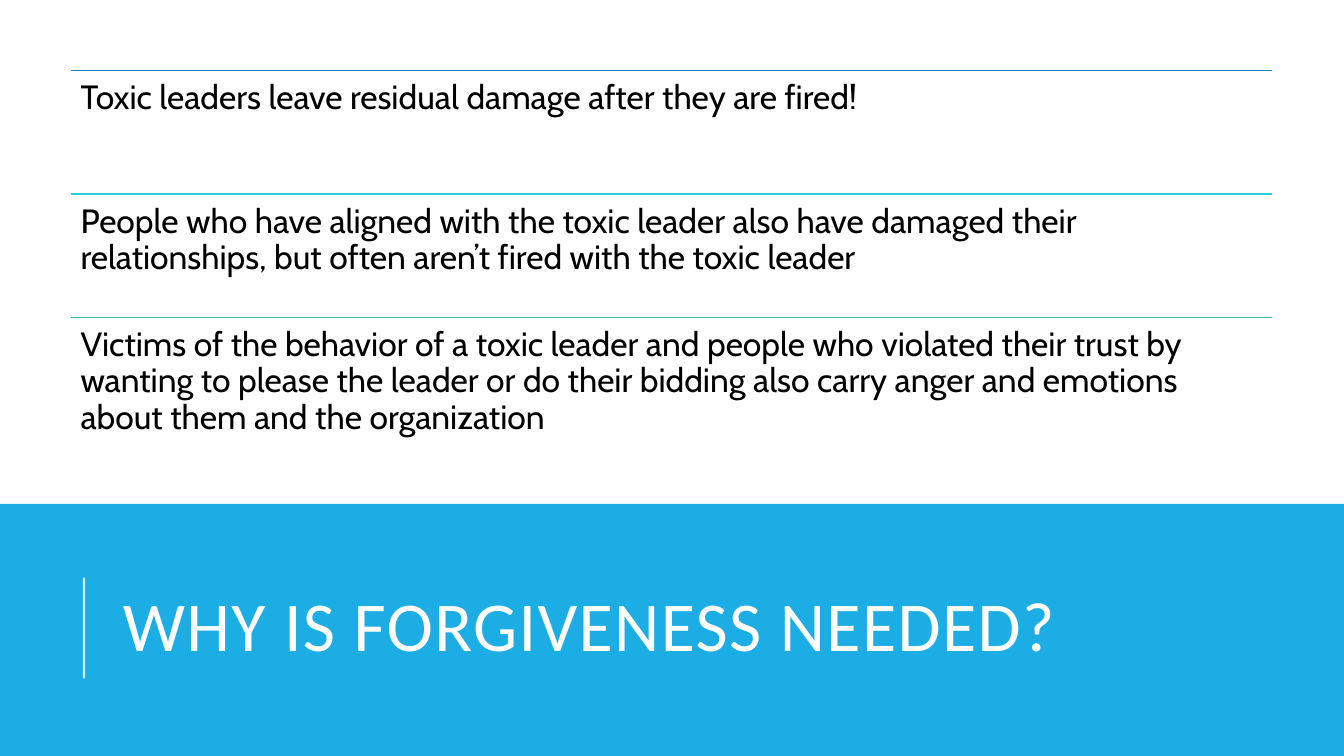
from dataclasses import dataclass

from lxml.etree import SubElement
from pptx import Presentation
from pptx.dml.color import RGBColor
from pptx.enum.shapes import MSO_CONNECTOR, MSO_SHAPE
from pptx.enum.text import MSO_ANCHOR
from pptx.oxml.ns import qn
from pptx.util import Inches, Pt

WHITE = RGBColor(0xFF, 0xFF, 0xFF)
BLACK = RGBColor(0x00, 0x00, 0x00)
SKY = RGBColor(0x1C, 0xAD, 0xE4)
BLUE = RGBColor(0x26, 0x83, 0xC6)
TURQUOISE = RGBColor(0x27, 0xCE, 0xD7)
GREEN = RGBColor(0x42, 0xBA, 0x97)

SLIDE_WIDTH, SLIDE_HEIGHT = Inches(13.33), Inches(7.5)
BANNER_TOP = SLIDE_HEIGHT * 2 // 3
LIST_LEFT, LIST_TOP = Inches(0.7), Inches(0.7)
LIST_WIDTH, ROW_HEIGHT = Inches(11.92), Inches(1.225)


@dataclass(frozen=True)
class Reason:
    text: str
    rule_color: RGBColor


@dataclass(frozen=True)
class TextStyle:
    font: str
    size: int
    color: RGBColor
    line_spacing: float
    anchor: MSO_ANCHOR
    side_inset: float = 0.1
    end_inset: float = 0.1


TITLE_STYLE = TextStyle("Calibri", 50, WHITE, 0.8, MSO_ANCHOR.MIDDLE, end_inset=0.05)
REASON_STYLE = TextStyle("Cabin", 24, BLACK, 0.9, MSO_ANCHOR.TOP)

REASONS = (
    Reason("Toxic leaders leave residual damage after they are fired!", BLUE),
    Reason(
        "People who have aligned with the toxic leader also have damaged their "
        "relationships, but often aren’t fired with the toxic leader",
        TURQUOISE,
    ),
    Reason(
        "Victims of the behavior of a toxic leader and people who violated their "
        "trust by wanting to please the leader or do their bidding also carry "
        "anger and emotions about them and the organization",
        GREEN,
    ),
)


def add_line(slide, start: tuple, end: tuple, color: RGBColor, width: float):
    line = slide.shapes.add_connector(MSO_CONNECTOR.STRAIGHT, *start, *end)
    line.line.color.rgb = color
    line.line.width = Pt(width)
    SubElement(line._element.spPr, qn("a:effectLst"))
    return line


def add_text(slide, box: tuple, text: str, style: TextStyle):
    """Add a wrapped one-paragraph text box and return its paragraph."""
    frame = slide.shapes.add_textbox(*box).text_frame
    frame.word_wrap = True
    frame.vertical_anchor = style.anchor
    frame.margin_left = frame.margin_right = Inches(style.side_inset)
    frame.margin_top = frame.margin_bottom = Inches(style.end_inset)
    paragraph = frame.paragraphs[0]
    paragraph.text = text
    paragraph.line_spacing = style.line_spacing
    paragraph.font.name = style.font
    paragraph.font.size = Pt(style.size)
    paragraph.font.color.rgb = style.color
    return paragraph


def add_banner(slide) -> None:
    banner = slide.shapes.add_shape(
        MSO_SHAPE.RECTANGLE, 0, BANNER_TOP, SLIDE_WIDTH, SLIDE_HEIGHT - BANNER_TOP
    )
    banner.shadow.inherit = False
    banner.fill.solid()
    banner.fill.fore_color.rgb = SKY
    banner.line.fill.background()

    title_box = (Inches(1.12), Inches(5.44), Inches(10.63), Inches(1.64))
    title = add_text(slide, title_box, "WHY IS FORGIVENESS NEEDED?", TITLE_STYLE)
    title.runs[0].font._element.set("spc", "100")

    bar_left = SLIDE_WIDTH // 16
    bar = add_line(
        slide, (bar_left, Inches(6.73)), (bar_left, Inches(5.73)), WHITE, 1.5
    )
    color = bar.line._ln.find(".//" + qn("a:srgbClr"))
    SubElement(color, qn("a:alpha"), val="80000")


def add_reason(slide, row: int, reason: Reason) -> None:
    top = LIST_TOP + row * ROW_HEIGHT
    add_line(
        slide, (LIST_LEFT, top), (LIST_LEFT + LIST_WIDTH, top), reason.rule_color, 1.25
    )
    add_text(slide, (LIST_LEFT, top, LIST_WIDTH, ROW_HEIGHT), reason.text, REASON_STYLE)


def main() -> None:
    presentation = Presentation()
    presentation.slide_width = SLIDE_WIDTH
    presentation.slide_height = SLIDE_HEIGHT
    slide = presentation.slides.add_slide(presentation.slide_layouts[6])
    add_banner(slide)
    for row, reason in enumerate(REASONS):
        add_reason(slide, row, reason)
    presentation.save("out.pptx")


if __name__ == "__main__":
    main()
